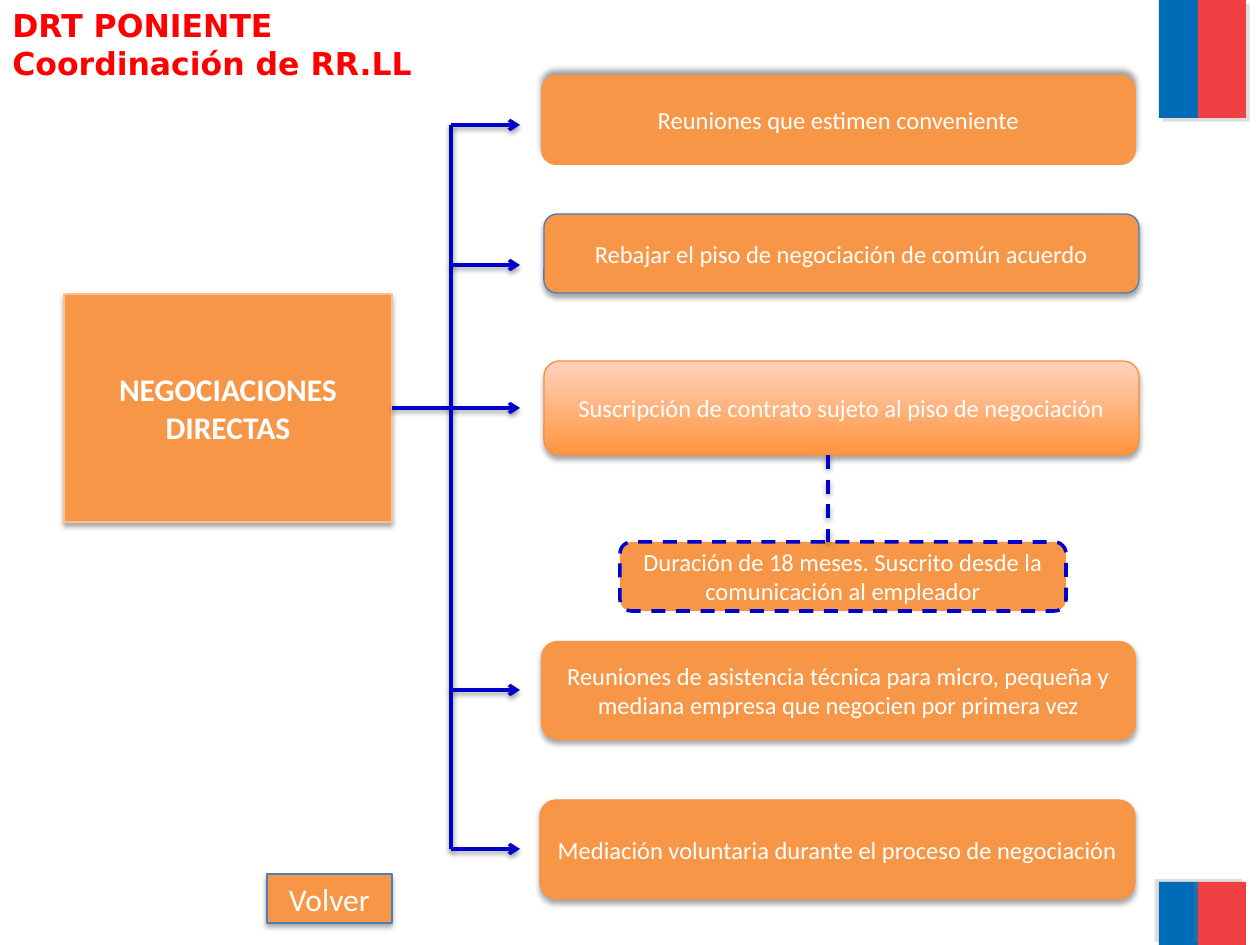
from dataclasses import dataclass
from typing import NamedTuple, Optional

from lxml import etree
from pptx import Presentation
from pptx import util as u
from pptx.dml.color import RGBColor
from pptx.enum import dml, shapes, text
from pptx.oxml import ns

EMU_PER_PX = 914400 / 126
RECT = shapes.MSO_SHAPE.RECTANGLE
ROUND = shapes.MSO_SHAPE.ROUNDED_RECTANGLE


@dataclass(frozen=True)
class Theme:
    orange: str = "F79646"
    orange_line: str = "F69240"
    pale_orange: str = "FAC090"
    gradient: tuple[str, str] = ("FF953E", "FFD2BD")
    blue_line: str = "4B7EBC"
    flow: str = "0000CC"
    flag_blue: str = "006CB7"
    flag_red: str = "EF4144"
    white: str = "FFFFFF"
    title: str = "FF0000"
    body_font: str = "Calibri"
    title_font: str = "DejaVu Sans"
    body_size: int = 14
    large_size: int = 18
    thin: float = 0.75
    thick: float = 2


class Shadow(NamedTuple):
    color: str
    opacity: int
    blur: float
    dist: float
    angle: int


T = Theme()
SOFT = Shadow("000000", 35, 3.1, 1.8, 90)
UPWARD = Shadow("000000", 40, 4, 3, 270)
LINE_SHADOW = Shadow("000000", 38, 3.1, 1.6, 90)
FLAG_TOP = Shadow("808080", 25, 0, 3, 45)
FLAG_BOTTOM = Shadow("808080", 25, 0, 3, 215)


@dataclass(frozen=True)
class Box:
    x: int
    y: int
    w: int
    h: int
    label: str = ""
    kind: int = ROUND
    fill: str = T.orange
    gradient: Optional[tuple[str, str]] = None
    line: Optional[str] = None
    line_width: float = T.thin
    dashed: bool = False
    shadow: Optional[Shadow] = SOFT
    size: int = T.body_size
    bold: bool = False


class Line(NamedTuple):
    x1: int
    y1: int
    x2: int
    y2: int
    arrow: bool = False
    dashed: bool = False


TRUNK_X, ARROW_X = 451, 520
MID_Y = 408
BRANCH_YS = (125, 265, MID_Y, 690, 849)

FLAGS = [
    Box(x, y, w, h, kind=RECT, fill=color, shadow=shadow)
    for y, h, shadow in ((0, 118, FLAG_TOP), (882, 63, FLAG_BOTTOM))
    for x, w, color in ((1159, 39, T.flag_blue), (1198, 48, T.flag_red))
]
TOPIC = Box(64, 294, 328, 228, "NEGOCIACIONES DIRECTAS", RECT,
            line=T.pale_orange, size=T.large_size, bold=True)
OPTIONS = [
    Box(541, 75, 595, 90, "Reuniones que estimen conveniente", shadow=UPWARD),
    Box(544, 214, 595, 79, "Rebajar el piso de negociación de común acuerdo",
        line=T.blue_line),
    Box(544, 361, 595, 94, "Suscripción de contrato sujeto al piso de negociación",
        gradient=T.gradient, line=T.orange_line),
    Box(541, 641, 595, 99, "Reuniones de asistencia técnica para micro, pequeña y "
        "mediana empresa que negocien por primera vez"),
    Box(540, 800, 595, 99, "Mediación voluntaria durante el proceso de negociación",
        line=T.orange_line),
]
DURATION = Box(620, 542, 446, 69, "Duración de 18 meses. Suscrito desde la "
               "comunicación al empleador", line=T.flow, line_width=T.thick,
               dashed=True, shadow=None)
BACK = Box(267, 874, 125, 49, "Volver", RECT, line=T.blue_line, size=T.large_size)
LINES = [
    Line(TRUNK_X, BRANCH_YS[0], TRUNK_X, BRANCH_YS[-1]),
    *(Line(TRUNK_X, y, ARROW_X, y, arrow=True) for y in BRANCH_YS),
    Line(828, 455, 828, 542, dashed=True),
]


def px(*values: int) -> list[int]:
    return [u.Emu(round(v * EMU_PER_PX)) for v in values]


def rgb(color: str) -> RGBColor:
    return RGBColor.from_string(color)


def set_shadow(sp_pr, shadow: Optional[Shadow]) -> None:
    """Replace any effect list; no shadow leaves it empty."""
    effects = sp_pr.find(ns.qn("a:effectLst"))
    if effects is None:
        effects = etree.SubElement(sp_pr, ns.qn("a:effectLst"))
    if shadow is None:
        return
    outer = etree.SubElement(
        effects, ns.qn("a:outerShdw"), blurRad=str(u.Pt(shadow.blur)),
        dist=str(u.Pt(shadow.dist)), dir=str(shadow.angle * 60000),
        algn="ctr", rotWithShape="0")
    color = etree.SubElement(outer, ns.qn("a:srgbClr"), val=shadow.color)
    etree.SubElement(color, ns.qn("a:alpha"), val=str(shadow.opacity * 1000))


def set_line(line, color: str, width: float, dashed: bool) -> None:
    line.color.rgb = rgb(color)
    line.width = u.Pt(width)
    if dashed:
        line.dash_style = dml.MSO_LINE.DASH


def set_font(font, name: str, size: int, color: str, bold: bool) -> None:
    font.name, font.size, font.bold = name, u.Pt(size), bold
    font.color.rgb = rgb(color)


def add_box(s, box: Box):
    sp = s.shapes.add_shape(box.kind, *px(box.x, box.y, box.w, box.h))
    if box.gradient:
        sp.fill.gradient()
        sp.fill.gradient_angle = 90
        for stop, color in zip(sp.fill.gradient_stops, box.gradient):
            stop.color.rgb = rgb(color)
    else:
        sp.fill.solid()
        sp.fill.fore_color.rgb = rgb(box.fill)
    if box.line:
        set_line(sp.line, box.line, box.line_width, box.dashed)
    else:
        sp.line.fill.background()
    sp.shadow.inherit = False
    set_shadow(sp.element.spPr, box.shadow)
    if box.label:
        tf = sp.text_frame
        tf.word_wrap = True
        tf.vertical_anchor = text.MSO_ANCHOR.MIDDLE
        p = tf.paragraphs[0]
        p.text = box.label
        p.alignment = text.PP_ALIGN.CENTER
        set_font(p.font, T.body_font, box.size, T.white, box.bold)
    return sp


def add_line(s, line: Line):
    cx = s.shapes.add_connector(shapes.MSO_CONNECTOR.STRAIGHT, *px(*line[:4]))
    set_line(cx.line, T.flow, T.thick, line.dashed)
    if line.arrow:
        etree.SubElement(cx.line._get_or_add_ln(), ns.qn("a:tailEnd"), type="arrow")
    set_shadow(cx.element.spPr, LINE_SHADOW)
    return cx


def add_title(s) -> None:
    tf = s.shapes.add_textbox(*px(0, 0, 491, 127)).text_frame
    tf.word_wrap = True
    p = tf.paragraphs[0]
    p.text = "DRT PONIENTE\vCoordinación de RR.LL"
    set_font(p.font, T.title_font, T.large_size, T.title, True)


def main() -> None:
    prs = Presentation()
    prs.slide_width, prs.slide_height = u.Inches(10), u.Inches(7.5)
    s = prs.slides.add_slide(prs.slide_layouts[6])
    for flag in FLAGS:
        add_box(s, flag)
    topic = add_box(s, TOPIC)
    stem = add_line(s, Line(TOPIC.x + TOPIC.w, MID_Y, TRUNK_X, MID_Y))
    stem.begin_connect(topic, 3)
    for box in (*OPTIONS, DURATION, BACK):
        add_box(s, box)
    for line in LINES:
        add_line(s, line)
    add_title(s)
    prs.save("out.pptx")


if __name__ == "__main__":
    main()
